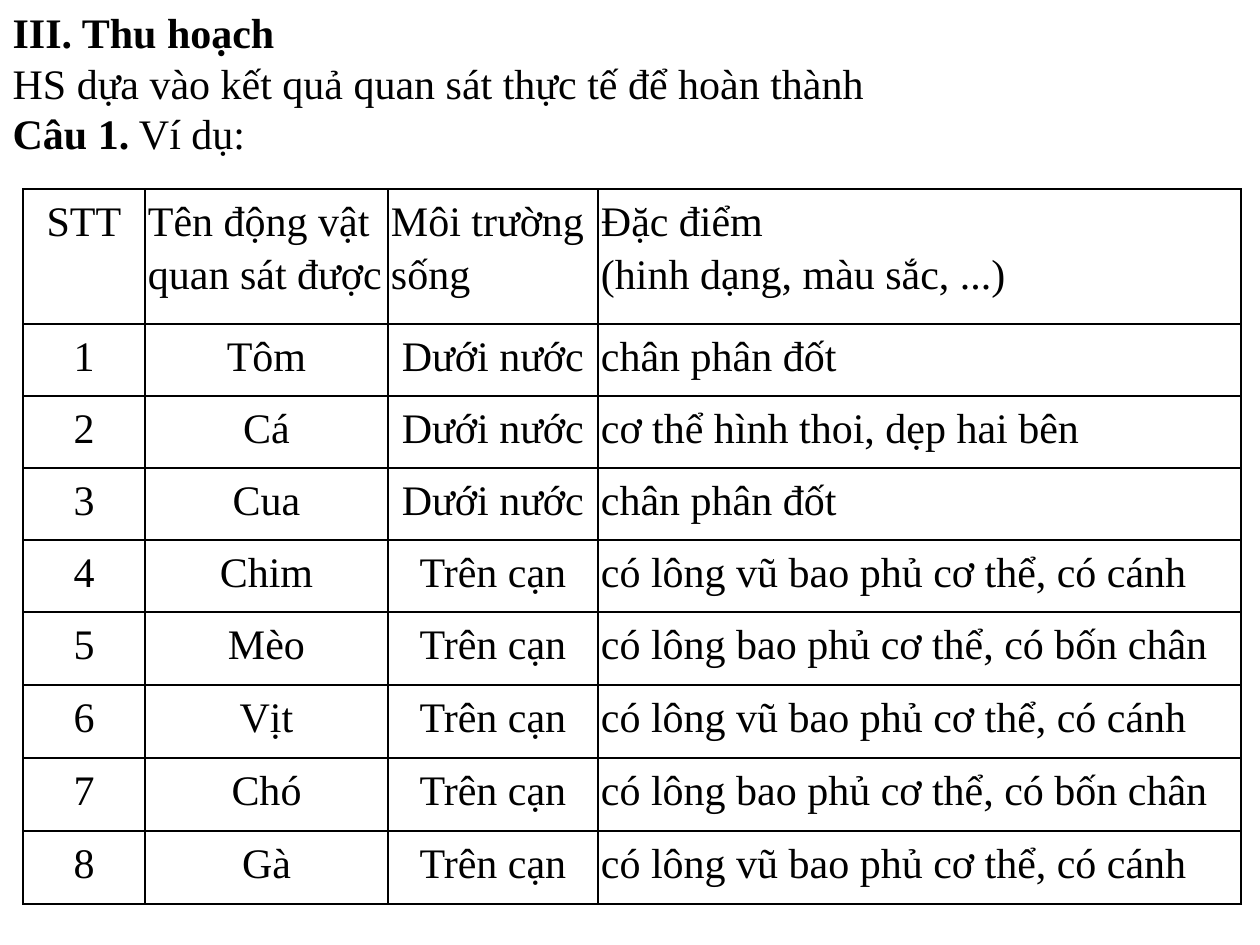
from dataclasses import dataclass

from lxml.etree import SubElement
from pptx import Presentation
from pptx.dml.color import RGBColor
from pptx.enum.text import MSO_ANCHOR as Anchor, MSO_AUTO_SIZE as AutoSize, PP_ALIGN as Align
from pptx.oxml.ns import qn
from pptx.util import Emu, Pt

PX = 914400 / 126
TITLE_ONLY = 5

HEADING = [
    [("III. Thu hoạch", True)],
    [("HS dựa vào kết quả quan sát thực tế để hoàn thành", False)],
    [("Câu 1.", True), (" Ví dụ:", False)],
]
HEADER = ["STT", "Tên động vật quan sát được", "Môi trường sống", "Đặc điểm\n(hinh dạng, màu sắc, ...)"]
WATER, LAND = "Dưới nước", "Trên cạn"
JOINTED = "chân phân đốt"
WINGED = "có lông vũ bao phủ cơ thể, có cánh"
FOUR_LEGGED = "có lông bao phủ cơ thể, có bốn chân"
ANIMALS = [
    ("Tôm", WATER, JOINTED),
    ("Cá", WATER, "cơ thể hình thoi, dẹp hai bên"),
    ("Cua", WATER, JOINTED),
    ("Chim", LAND, WINGED),
    ("Mèo", LAND, FOUR_LEGGED),
    ("Vịt", LAND, WINGED),
    ("Chó", LAND, FOUR_LEGGED),
    ("Gà", LAND, WINGED),
]
COLUMN_WIDTHS = [122, 243, 210, 643]
ROW_HEIGHTS = [135] + [72] * 4 + [73] * 4
HEADER_ALIGNS = [Align.CENTER] + [Align.LEFT] * 3
ANIMAL_ALIGNS = [Align.CENTER] * 3 + [Align.LEFT]


def px(length):
    return Emu(round(length * PX))


@dataclass(frozen=True)
class Theme:
    font: str = "Times New Roman"
    size: int = 24
    ink: str = "000000"
    paper: str = "FFFFFF"
    border: int = 1
    cell_inset: int = 3
    cell_spacing: float = 1.15


class SlideBuilder:
    def __init__(self, page, theme):
        self.page = page
        self.theme = theme

    def style(self, span, bold=False):
        span.font.name = self.theme.font
        span.font.size = Pt(self.theme.size)
        span.font.bold = bold
        span.font.color.rgb = RGBColor.from_string(self.theme.ink)

    def heading(self, left, top, width, height, lines):
        box = self.page.shapes.title
        box.left, box.top, box.width, box.height = map(px, (left, top, width, height))
        frame = box.text_frame
        frame.word_wrap = True
        frame.auto_size = AutoSize.SHAPE_TO_FIT_TEXT
        frame.vertical_anchor = Anchor.MIDDLE
        frame.text = "\n".join("" for _ in lines)
        for para, parts in zip(frame.paragraphs, lines):
            para.alignment = Align.LEFT
            for text, bold in parts:
                span = para.add_run()
                span.text = text
                self.style(span, bold)

    def borders(self, cell):
        properties = cell._tc.get_or_add_tcPr()
        for index, side in enumerate(("a:lnL", "a:lnR", "a:lnT", "a:lnB")):
            line = SubElement(properties, qn(side), w=str(Pt(self.theme.border)))
            fill = SubElement(line, qn("a:solidFill"))
            SubElement(fill, qn("a:srgbClr"), val=self.theme.ink)
            properties.insert(index, line)

    def cell(self, cell, text, align):
        inset = px(self.theme.cell_inset)
        cell.margin_left = cell.margin_right = cell.margin_top = cell.margin_bottom = inset
        cell.vertical_anchor = Anchor.TOP
        cell.fill.solid()
        cell.fill.fore_color.rgb = RGBColor.from_string(self.theme.paper)
        self.borders(cell)
        cell.text_frame.text = text
        for para in cell.text_frame.paragraphs:
            para.alignment = align
            para.line_spacing = self.theme.cell_spacing
            for span in para.runs:
                self.style(span)

    def table(self, left, top, widths, heights, rows):
        frame = self.page.shapes.add_table(
            len(heights), len(widths), px(left), px(top), px(sum(widths)), px(sum(heights)))
        table = frame.table
        table.first_row = table.horz_banding = False
        for column, width in zip(table.columns, widths):
            column.width = px(width)
        for row, height, (texts, aligns) in zip(table.rows, heights, rows):
            row.height = px(height)
            for cell, text, align in zip(row.cells, texts, aligns):
                self.cell(cell, text, align)


def main():
    deck = Presentation()
    deck.slide_width, deck.slide_height = px(1260), px(945)
    page = deck.slides.add_slide(deck.slide_layouts[TITLE_ONLY])
    builder = SlideBuilder(page, Theme())
    builder.heading(0, 0, 1166, 165, HEADING)
    rows = [(HEADER, HEADER_ALIGNS)]
    rows += [((str(number), *animal), ANIMAL_ALIGNS) for number, animal in enumerate(ANIMALS, 1)]
    builder.table(23, 189, COLUMN_WIDTHS, ROW_HEIGHTS, rows)
    deck.save("out.pptx")


if __name__ == "__main__":
    main()
